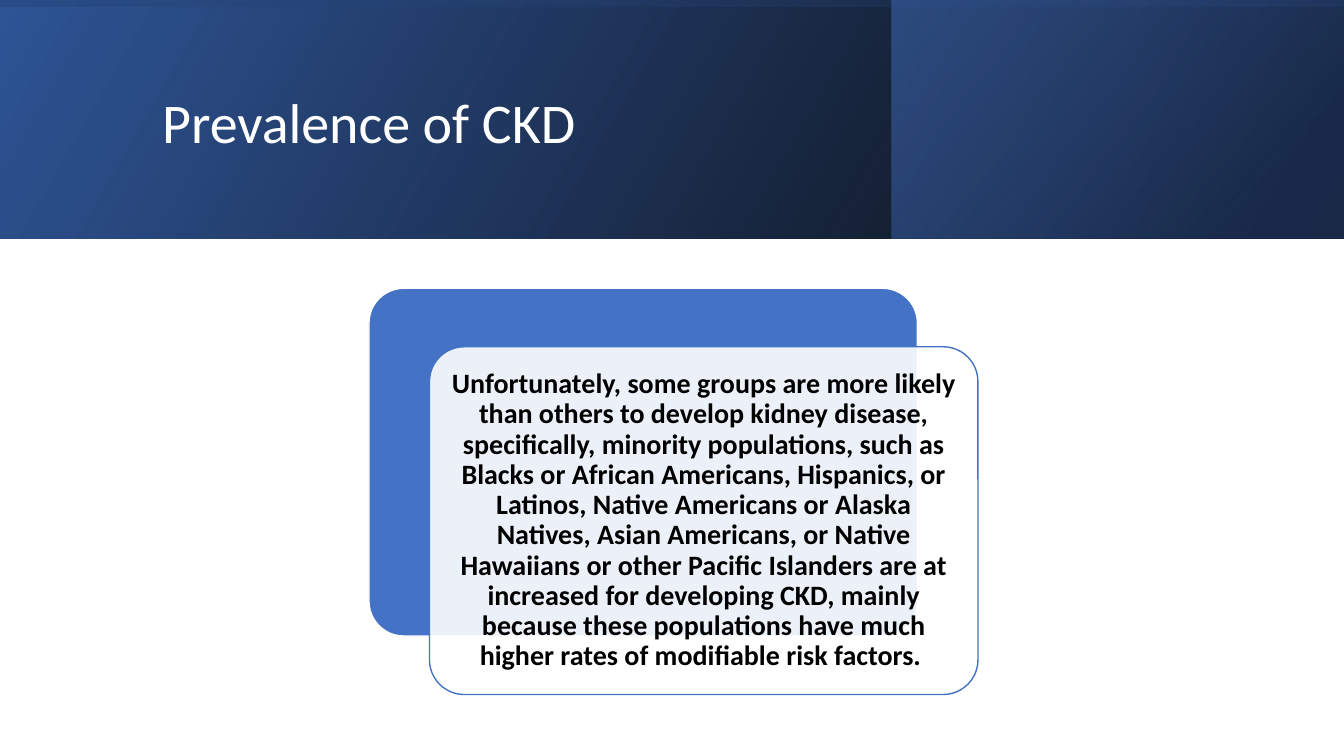
from dataclasses import dataclass

from lxml.etree import SubElement
from pptx import Presentation
from pptx.dml.color import RGBColor as RGB
from pptx.enum.shapes import MSO_SHAPE as SHAPE
from pptx.enum.text import MSO_ANCHOR as ANCHOR, PP_ALIGN as ALIGN
from pptx.oxml.ns import qn
from pptx.util import Pt

SCALE = 9144  # EMU per px, 100 px to the inch
WIDE, HIGH, BAND = 1333, 750, 237
FONT = "Calibri"
INK = {
    "black": "000000",
    "white": "FFFFFF",
    "blue": "4472C4",
    "deep": "2F5597",
    "navy": "203864",
}
BODY = (
    "Unfortunately, some groups are more likely than others to develop kidney "
    "disease, specifically, minority populations, such as Blacks or African "
    "Americans, Hispanics, or Latinos, Native Americans or Alaska Natives, Asian "
    "Americans, or Native Hawaiians or other Pacific Islanders are at increased "
    "for developing CKD, mainly because these populations have much higher rates "
    "of modifiable risk factors. "
)


@dataclass
class Box:
    x: int
    y: int
    w: int
    h: int

    def emu(self) -> list[int]:
        return [n * SCALE for n in (self.x, self.y, self.w, self.h)]


@dataclass
class Stop:
    at: int  # percent along the gradient
    ink: str
    alpha: int  # percent opaque


@dataclass
class Panel:
    box: Box
    stops: tuple[Stop, Stop]
    angle: int  # clockwise
    turn: int = 0


@dataclass
class Card:
    box: Box
    fill: str
    line: str
    alpha: int = 100


PANELS = [
    Panel(Box(0, 0, WIDE, BAND),
          (Stop(0, "black", 96), Stop(100, "deep", 100)), 330),
    Panel(Box(884, 0, WIDE - 884, BAND),
          (Stop(19, "navy", 68), Stop(100, "blue", 48)), 320),
    Panel(Box((WIDE - BAND) // 2, (BAND - WIDE) // 2, BAND, WIDE),
          (Stop(23, "deep", 16), Stop(99, "black", 45)), 350, 270),
]
CARDS = [
    Card(Box(366, 286, 544, 345), "blue", "white"),
    Card(Box(426, 344, 544, 345), "white", "blue", 90),
]


def color(name: str) -> RGB:
    return RGB.from_string(INK[name])


def fade(node, alpha: int) -> None:
    """Set the opacity, in percent, of a colour element."""
    if alpha < 100:
        SubElement(node, qn("a:alpha")).set("val", str(alpha * 1000))


def panel(slide, item: Panel) -> None:
    shape = slide.shapes.add_shape(SHAPE.RECTANGLE, *item.box.emu())
    shape.shadow.inherit = False
    shape.rotation = item.turn
    shape.line.fill.background()
    shape.fill.gradient()
    shape.fill.gradient_angle = 360 - item.angle
    for slot, stop in zip(shape.fill.gradient_stops, item.stops):
        slot.position = stop.at / 100
        slot.color.rgb = color(stop.ink)
    props = shape.element.spPr
    props.find(qn("a:xfrm")).set("flipH", "1")
    for node, stop in zip(props.iter(qn("a:srgbClr")), item.stops):
        fade(node, stop.alpha)


def card(slide, item: Card) -> None:
    shape = slide.shapes.add_shape(SHAPE.ROUNDED_RECTANGLE, *item.box.emu())
    shape.shadow.inherit = False
    shape.adjustments[0] = 0.1
    shape.fill.solid()
    shape.fill.fore_color.rgb = color(item.fill)
    fade(next(shape.element.spPr.iter(qn("a:srgbClr"))), item.alpha)
    shape.line.color.rgb = color(item.line)
    shape.line.width = Pt(1)


def write(slide, box: Box, text: str, *, size: int, ink: str,
          bold: bool = False, align=ALIGN.LEFT, inset: int = 10) -> None:
    frame = slide.shapes.add_textbox(*box.emu()).text_frame
    frame.word_wrap = True
    frame.vertical_anchor = ANCHOR.MIDDLE
    frame.margin_left = frame.margin_right = inset * SCALE
    frame.margin_top = frame.margin_bottom = inset * SCALE
    para = frame.paragraphs[0]
    para.alignment = align
    para.line_spacing = 0.9
    run = para.add_run()
    run.text = text
    run.font.name = FONT
    run.font.size = Pt(size)
    run.font.bold = bold
    run.font.color.rgb = color(ink)


def main() -> None:
    deck = Presentation()
    deck.slide_width, deck.slide_height = WIDE * SCALE, HIGH * SCALE
    slide = deck.slides.add_slide(deck.slide_layouts[6])

    # Header band and title
    for item in PANELS:
        panel(slide, item)
    write(slide, Box(151, 38, 1063, 172), "Prevalence of CKD",
          size=40, ink="white")

    # Overlapping cards and body text
    for item in CARDS:
        card(slide, item)
    write(slide, Box(436, 354, 524, 325), BODY, size=20, ink="black",
          bold=True, align=ALIGN.CENTER, inset=8)

    deck.save("out.pptx")


if __name__ == "__main__":
    main()
